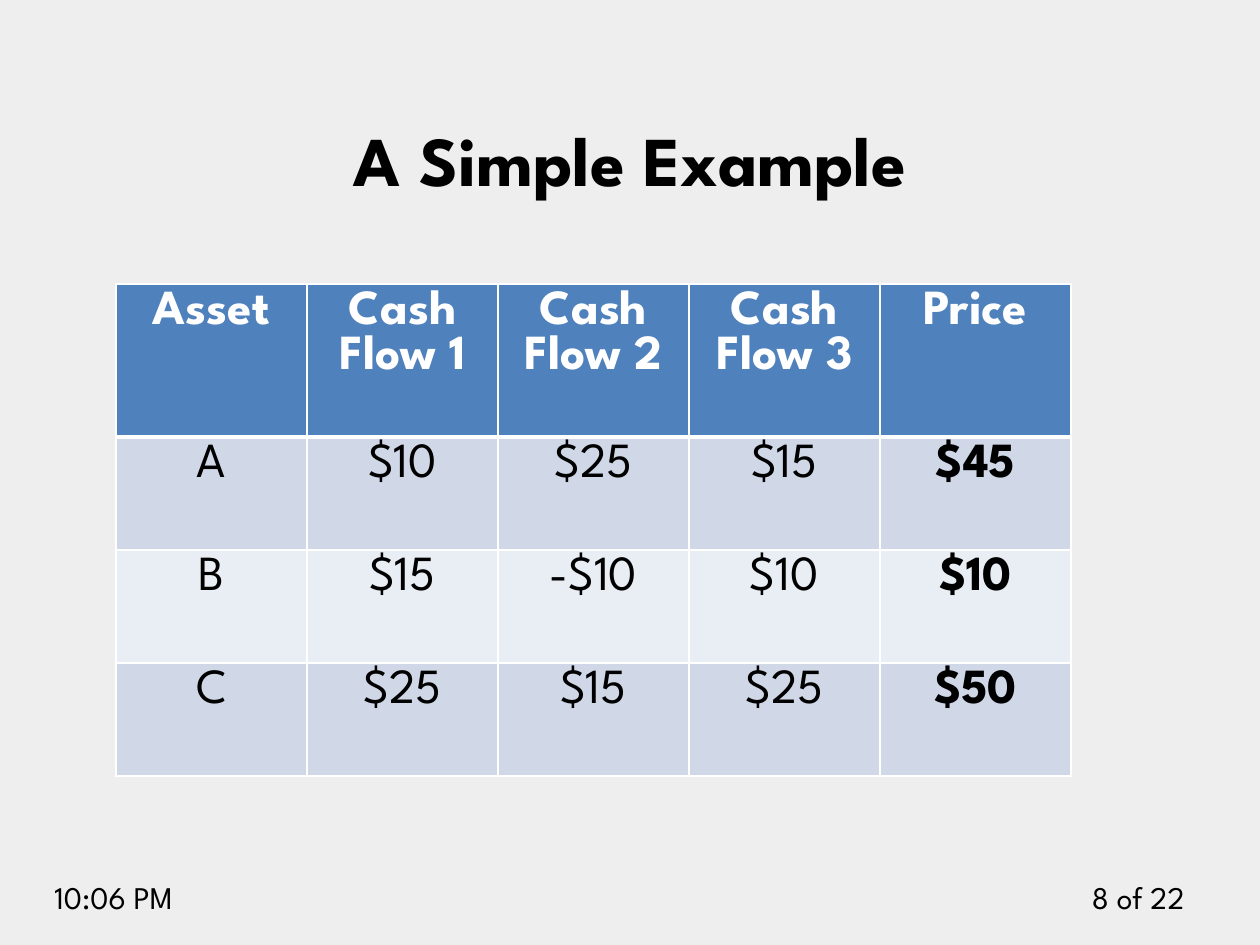
from lxml.etree import SubElement
from pptx import Presentation
from pptx.dml.color import RGBColor
from pptx.enum.text import MSO_ANCHOR as Anchor, PP_ALIGN as Align
from pptx.oxml.ns import qn
from pptx.util import Emu, Pt

FONT = "League Spartan"
BLACK = RGBColor(0x00, 0x00, 0x00)
WHITE = RGBColor(0xFF, 0xFF, 0xFF)
PAPER = RGBColor(0xEE, 0xEE, 0xEE)
HEADER_BLUE = RGBColor(0x4F, 0x81, 0xBD)
BANDS = RGBColor(0xD0, 0xD8, 0xE8), RGBColor(0xE9, 0xED, 0xF4)

HEADER_HEIGHT, ROW_HEIGHT = 153, 113
ASSETS = [
    ["Asset", "Cash Flow 1", "Cash Flow 2", "Cash Flow 3", "Price"],
    ["A", "$10", "$25", "$15", "$45"],
    ["B", "$15", "-$10", "$10", "$10"],
    ["C", "$25", "$15", "$25", "$50"],
]


def px(length):
    return Emu(round(length * 914400 / 126))


def write(frame, text, size, align, color=BLACK, bold=False):
    frame.text = text
    paragraph = frame.paragraphs[0]
    paragraph.alignment = align
    font = paragraph.font
    font.name, font.size, font.bold = FONT, Pt(size), bold
    font.color.rgb = color


def place_title(slide, left, top, width, height):
    title = slide.shapes.title
    title.left, title.top = px(left), px(top)
    title.width, title.height = px(width), px(height)
    title.text_frame.vertical_anchor = Anchor.BOTTOM
    write(title.text_frame, "A Simple Example", 40, Align.CENTER, bold=True)


def add_footer(slide, text, align, left, top, width, height):
    footer = slide.shapes.add_textbox(px(left), px(top), px(width), px(height))
    footer.text_frame.word_wrap = True
    write(footer.text_frame, text, 18, align)


def set_borders(cell, **widths):
    """Draw white borders; widths maps the sides L, R, T, B to points."""
    properties = cell._tc.get_or_add_tcPr()
    for side, width in widths.items():
        line = SubElement(properties, qn(f"a:ln{side}"), w=str(Pt(width)))
        fill = SubElement(line, qn("a:solidFill"))
        SubElement(fill, qn("a:srgbClr"), val=str(WHITE))


def add_asset_table(slide, left, top, width):
    row_count, column_count = len(ASSETS), len(ASSETS[0])
    height = HEADER_HEIGHT + (row_count - 1) * ROW_HEIGHT
    table = slide.shapes.add_table(
        row_count, column_count, px(left), px(top), px(width), px(height)
    ).table
    for column in table.columns:
        column.width = px(width / column_count)
    for r, values in enumerate(ASSETS):
        header = r == 0
        table.rows[r].height = px(HEADER_HEIGHT if header else ROW_HEIGHT)
        for c, value in enumerate(values):
            cell = table.cell(r, c)
            set_borders(cell, L=1, R=1, T=3 if r == 1 else 1, B=3 if header else 1)
            cell.fill.solid()
            cell.fill.fore_color.rgb = HEADER_BLUE if header else BANDS[(r - 1) % 2]
            is_price = c == column_count - 1
            write(cell.text_frame, value, 28, Align.CENTER,
                  WHITE if header else BLACK, header or is_price)


def main():
    deck = Presentation()
    deck.slide_width, deck.slide_height = px(1260), px(945)
    slide = deck.slides.add_slide(deck.slide_layouts[5])
    slide.background.fill.solid()
    slide.background.fill.fore_color.rgb = PAPER

    add_footer(slide, "8 of 22", Align.RIGHT, 1050, 872, 147, 50)
    add_footer(slide, "10:06 PM", Align.LEFT, 42, 872, 199, 50)
    place_title(slide, 63, 49, 1134, 158)
    add_asset_table(slide, 116, 284, 955)
    deck.save("out.pptx")


if __name__ == "__main__":
    main()
